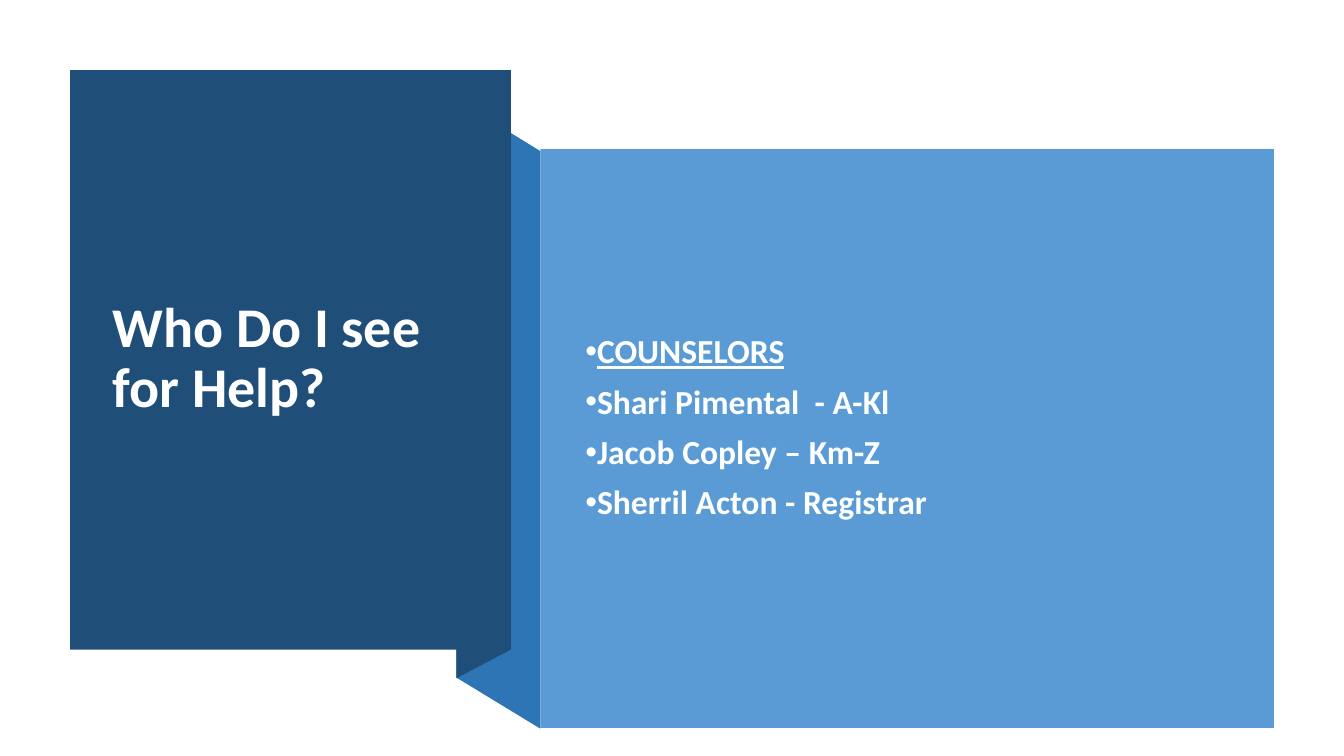
from pptx import Presentation
from pptx import util as u
from pptx.dml.color import RGBColor
from pptx.enum import shapes, text
from pptx.oxml import parse_xml
from pptx.oxml.ns import nsdecls

COLORS = {"navy": "1F4E79", "fold": "2E75B6", "sky": "5B9BD5",
          "white": "FFFFFF", "body": "FEFFFF"}


class RibbonSlide:
    def __init__(self, slide, font="Calibri"):
        self.slide = slide
        self.font = font

    def paint(self, shape, color):
        shape.shadow.inherit = False
        shape.fill.solid()
        shape.fill.fore_color.rgb = RGBColor.from_string(COLORS[color])
        shape.line.fill.background()

    def polygon(self, points, color):
        corners = [(u.Pt(x), u.Pt(y)) for x, y in points]
        outline = self.slide.shapes.build_freeform(*corners[0], scale=1.0)
        outline.add_line_segments(corners[1:], close=True)
        self.paint(outline.convert_to_shape(), color)

    def panel(self, box, color):
        panel = self.slide.shapes.add_shape(
            shapes.MSO_SHAPE.RECTANGLE, *map(u.Pt, box))
        self.paint(panel, color)

    def text_block(self, box, lines, color, size, space_before=0, bullet=None):
        """Add bold lines, given as (wording, underlined), centred vertically."""
        frame = self.slide.shapes.add_textbox(*map(u.Pt, box)).text_frame
        frame.word_wrap = True
        frame.vertical_anchor = text.MSO_ANCHOR.MIDDLE
        for index, (wording, underlined) in enumerate(lines):
            line = frame.add_paragraph() if index else frame.paragraphs[0]
            line.line_spacing = 0.9
            line.space_before = u.Pt(space_before)
            run = line.add_run()
            run.text = wording
            style = {"name": self.font, "size": u.Pt(size),
                     "bold": True, "underline": underlined}
            for key, value in style.items():
                setattr(run.font, key, value)
            run.font.color.rgb = RGBColor.from_string(COLORS[color])
            if bullet:
                self.add_bullet(line, bullet)

    def add_bullet(self, line, bullet):
        props = line._p.get_or_add_pPr()
        props.set("marL", "0")
        props.set("indent", str(-u.Pt(18)))
        for tag in (f'<a:buFont {nsdecls("a")} typeface="Arial"/>',
                    f'<a:buChar {nsdecls("a")} char="{bullet}"/>'):
            props.append(parse_xml(tag))


def main():
    deck = Presentation()
    deck.slide_width, deck.slide_height = u.Pt(960), u.Pt(540)
    ribbon = RibbonSlide(deck.slides.add_slide(deck.slide_layouts[6]))

    ribbon.polygon([(386, 520.5), (326, 484), (326, 71), (386, 108)], "fold")
    ribbon.polygon([(365, 464), (326, 484.5), (326, 70.5), (365, 50)], "navy")
    ribbon.panel((50, 50, 315, 414), "navy")
    ribbon.text_block((73.5, 77, 267, 359),
                      [("Who Do I see for Help?", False)], "white", 40)

    ribbon.panel((386, 106.5, 524, 413.5), "sky")
    contacts = [("COUNSELORS", True),
                ("Shari Pimental  - A-Kl", False),
                ("Jacob Copley – Km-Z", False),
                ("Sherril Acton - Registrar", False)]
    ribbon.text_block((411, 135.5, 469, 341), contacts, "body", 24,
                      space_before=10, bullet="•")
    deck.save("out.pptx")


if __name__ == "__main__":
    main()
